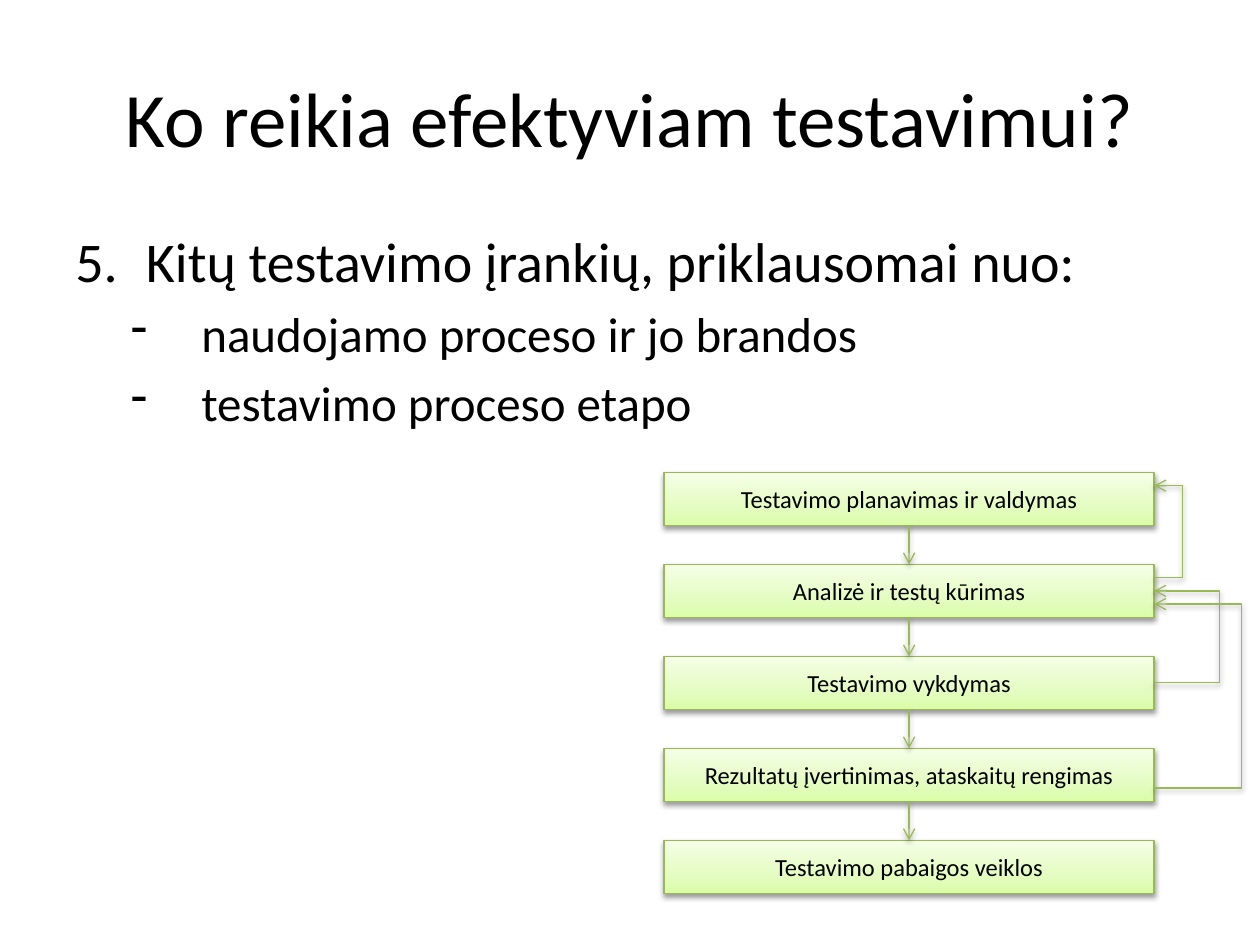
from copy import deepcopy

from lxml import etree
from pptx import Presentation
from pptx.dml.color import RGBColor
from pptx.enum.shapes import MSO_CONNECTOR as CONN, MSO_SHAPE as SHAPE
from pptx.enum.text import MSO_ANCHOR as ANCHOR, PP_ALIGN as ALIGN
from pptx.oxml import parse_xml
from pptx.oxml.ns import qn
from pptx.util import Inches, Pt

COLORS = {
    "text": "000000",
    "line": "98B955",
    "bottom": "DAFDA7",
    "middle": "E4FCC2",
    "top": "F5FFE7",
    "shadow": "000000",
}
STEPS = [
    "Testavimo planavimas ir valdymas",
    "Analizė ir testų kūrimas",
    "Testavimo vykdymas",
    "Rezultatų įvertinimas, ataskaitų rengimas",
    "Testavimo pabaigos veiklos",
]
# from step, to step, height within the box, reach to the right
LOOPS = [(1, 0, 0.25, 0.2), (2, 1, 0.5, 0.46), (3, 1, 0.75, 0.61)]
BOX_X, BOX_Y, BOX_W, BOX_H, PITCH = 5.27, 3.75, 3.89, 0.42, 0.73
A_NS = "http://schemas.openxmlformats.org/drawingml/2006/main"
SHADOW = (
    f'<a:effectLst xmlns:a="{A_NS}">'
    '<a:outerShdw blurRad="40000" dist="20000" dir="5400000" rotWithShape="0">'
    f'<a:srgbClr val="{COLORS["shadow"]}"><a:alpha val="38000"/></a:srgbClr>'
    "</a:outerShdw></a:effectLst>"
)


def rgb(name):
    return RGBColor.from_string(COLORS[name])


class SlideBuilder:
    """Holds the style, the current slide and the group for the flow chart."""

    font = "Calibri"

    def __init__(self, slide):
        self.slide = slide
        self.flow = slide.shapes.add_group_shape().shapes

    def run(self, p, text, size):
        r = p.add_run()
        r.text = text
        r.font.name, r.font.size = self.font, Pt(size)
        r.font.color.rgb = rgb("text")

    def text_box(self, x, y, w, h, anchor=ANCHOR.TOP):
        sp = self.slide.shapes.add_textbox(Inches(x), Inches(y), Inches(w), Inches(h))
        tf = sp.text_frame
        tf.word_wrap, tf.vertical_anchor = True, anchor
        return tf

    def title(self, text):
        p = self.text_box(0.5, 0.3, 9, 1.25, ANCHOR.MIDDLE).paragraphs[0]
        p.alignment = ALIGN.CENTER
        self.run(p, text, 44)

    def list_item(self, p, text, size, indent, bullet, level=0, **attrs):
        p.level, p.space_before = level, Pt(size * 0.2)
        p_pr = p._p.get_or_add_pPr()
        p_pr.set("marL", str(Inches(indent)))
        p_pr.set("indent", str(-Inches(0.56)))
        etree.SubElement(p_pr, qn(bullet), attrs)
        self.run(p, text, size)

    def style_line(self, sp):
        sp.line.color.rgb, sp.line.width = rgb("line"), Pt(0.75)

    def box(self, x, y, w, h, text):
        sp = self.flow.add_shape(SHAPE.RECTANGLE, Inches(x), Inches(y), Inches(w), Inches(h))
        sp.fill.gradient()
        sp.fill.gradient_angle = 90
        first = sp._element.spPr.find(".//" + qn("a:gs"))
        first.addnext(deepcopy(first))
        stops = zip(sp.fill.gradient_stops, (0, 0.35, 1), ("bottom", "middle", "top"))
        for stop, position, color in stops:
            stop.position, stop.color.rgb = position, rgb(color)
        self.style_line(sp)
        sp._element.spPr.append(parse_xml(SHADOW))
        tf = sp.text_frame
        tf.word_wrap, tf.vertical_anchor = True, ANCHOR.MIDDLE
        tf.paragraphs[0].alignment = ALIGN.CENTER
        self.run(tf.paragraphs[0], text, 14)

    def arrow(self, kind, x1, y1, x2, y2):
        cx = self.flow.add_connector(kind, x1, y1, x2, y2)
        self.style_line(cx)
        etree.SubElement(cx.line._get_or_add_ln(), qn("a:tailEnd"), type="arrow")
        cx._element.spPr.append(parse_xml(SHADOW))
        return cx

    def loop(self, x, y1, y2, reach):
        """Elbow arrow that leaves and returns on the same side."""
        width = Pt(0.1)  # the bend is a share of the width, so it cannot be zero
        cx = self.arrow(CONN.ELBOW, Inches(x), Inches(y1), Inches(x) + width, Inches(y2))
        bend = round(Inches(reach) / width * 100000)
        geom = cx._element.spPr.find(qn("a:prstGeom"))
        guides = geom.find(qn("a:avLst"))
        if guides is None:
            guides = etree.SubElement(geom, qn("a:avLst"))
        etree.SubElement(guides, qn("a:gd"), name="adj1", fmla=f"val {bend}")


def main():
    prs = Presentation()
    prs.slide_width, prs.slide_height = Inches(10), Inches(7.5)
    s = SlideBuilder(prs.slides.add_slide(prs.slide_layouts[6]))

    s.title("Ko reikia efektyviam testavimui?")
    tf = s.text_box(0.5, 1.75, 9, 4.95)
    s.list_item(tf.paragraphs[0], "Kitų testavimo įrankių, priklausomai nuo:", 32, 0.56,
                "a:buAutoNum", type="arabicPeriod", startAt="5")
    for text in ("naudojamo proceso ir jo brandos", "testavimo proceso etapo"):
        s.list_item(tf.add_paragraph(), text, 28, 1, "a:buChar", level=1, char="-")

    tops = [BOX_Y + i * PITCH for i in range(len(STEPS))]
    for top, text in zip(tops, STEPS):
        s.box(BOX_X, top, BOX_W, BOX_H, text)
    center = Inches(BOX_X + BOX_W / 2)
    for top, following in zip(tops, tops[1:]):
        s.arrow(CONN.STRAIGHT, center, Inches(top + BOX_H), center, Inches(following))
    for start, end, share, reach in LOOPS:
        offset = BOX_H * share
        s.loop(BOX_X + BOX_W, tops[start] + offset, tops[end] + offset, reach)

    prs.save("out.pptx")


if __name__ == "__main__":
    main()
